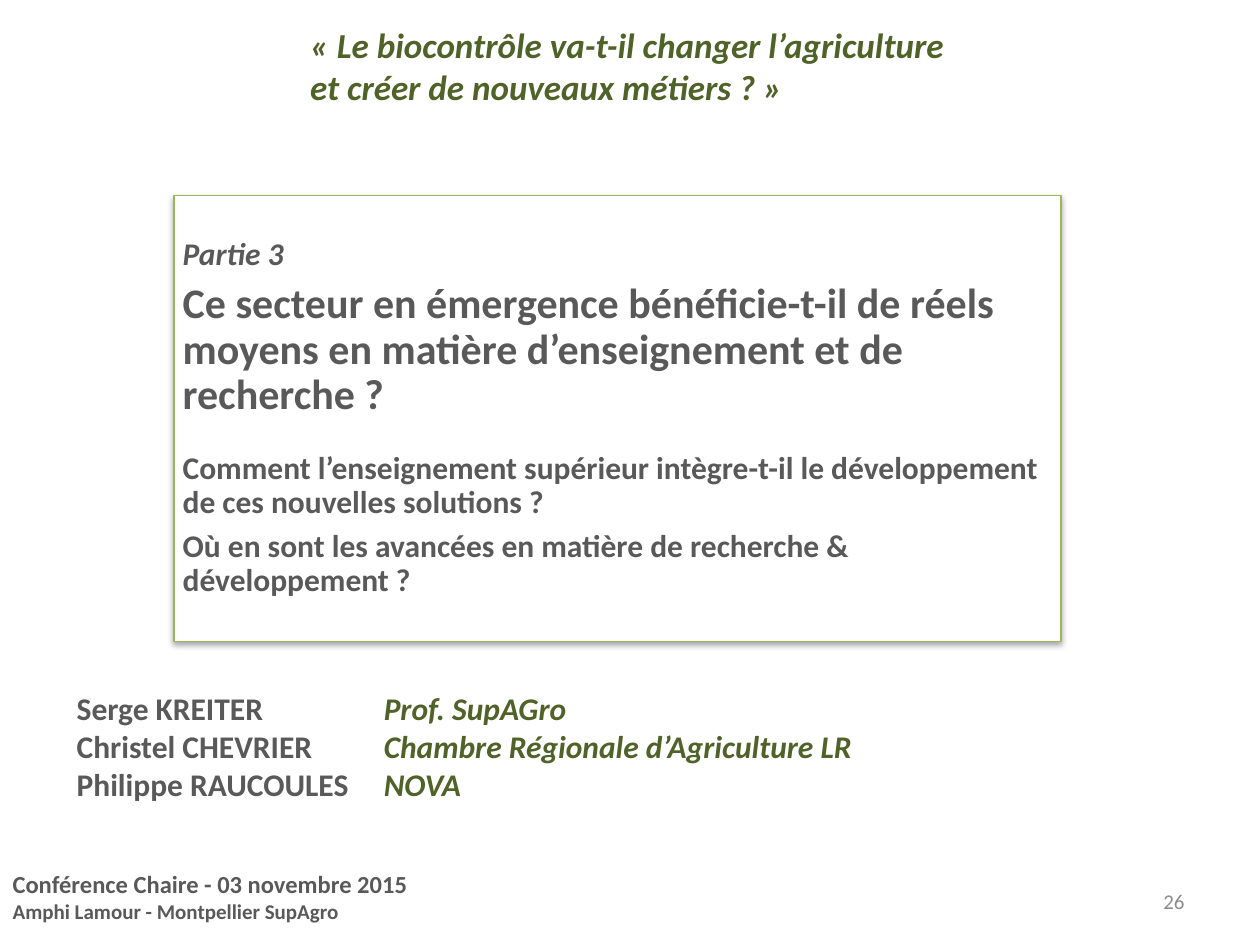
from lxml.etree import SubElement
from pptx import Presentation
from pptx.dml.color import RGBColor
from pptx.enum.shapes import MSO_SHAPE as Shape
from pptx.enum.text import MSO_ANCHOR as Anchor, MSO_AUTO_SIZE as AutoSize, PP_ALIGN as Align
from pptx.oxml import parse_xml
from pptx.oxml.ns import nsdecls, qn
from pptx.util import Pt

GREY, GREEN = "595959", "4F6228"
SHADOW = (
    f'<a:effectLst {nsdecls("a")}><a:outerShdw blurRad="{Pt(3.1)}" dist="{Pt(1.8)}" '
    'dir="5400000" rotWithShape="0"><a:srgbClr val="000000"><a:alpha val="35000"/>'
    '</a:srgbClr></a:outerShdw></a:effectLst>'
)


def rgb(hex_code):
    """Turn a hex string into a colour."""
    return RGBColor.from_string(hex_code)


def place(region, box):
    """Move a shape to a box given in points."""
    region.left, region.top, region.width, region.height = (Pt(length) for length in box)


def prepare(frame, anchor, side=7.2, edge=3.6):
    """Set wrapping, anchor and margins of a text frame."""
    frame.word_wrap = True
    frame.auto_size = AutoSize.NONE
    frame.vertical_anchor = anchor
    frame.margin_left = frame.margin_right = Pt(side)
    frame.margin_top = frame.margin_bottom = Pt(edge)


def add_paragraph(frame, index, align=Align.LEFT):
    """Return the paragraph at an index, adding it after the first one."""
    paragraph = frame.add_paragraph() if index else frame.paragraphs[0]
    paragraph.alignment = align
    paragraph.space_before = paragraph.space_after = Pt(0)
    return paragraph


def add_run(paragraph, words, size, color, bold=True, italic=False):
    """Add one formatted run."""
    run = paragraph.add_run()
    run.text = words
    font = run.font
    font.name, font.size, font.bold, font.italic = "Calibri", Pt(size), bold, italic
    font.color.rgb = rgb(color)


def fill_heading(title, box):
    """Write the conference question in the title."""
    place(title, box)
    prepare(title.text_frame, Anchor.MIDDLE)
    question = add_paragraph(title.text_frame, 0)
    add_run(question, "«\u00a0Le biocontrôle va-t-il changer l’agriculture", 20, GREEN, italic=True)
    question.add_line_break()
    add_run(question, "et créer de nouveaux métiers ?\u00a0»", 20, GREEN, italic=True)


def fill_event(subtitle, box):
    """Write the event and its venue in the subtitle."""
    place(subtitle, box)
    prepare(subtitle.text_frame, Anchor.TOP)
    event = (("Conférence Chaire - 03 novembre 2015", 14),
             ("Amphi Lamour - Montpellier SupAgro", 12))
    for index, (words, size) in enumerate(event):
        add_run(add_paragraph(subtitle.text_frame, index), words, size, GREY)


def add_part(slide, box):
    """Add the framed part title with its questions."""
    panel = slide.shapes.add_shape(Shape.RECTANGLE, *(Pt(length) for length in box))
    panel.fill.solid()
    panel.fill.fore_color.rgb = rgb("FFFFFF")
    panel.line.color.rgb = rgb("98B955")
    panel.line.width = Pt(0.75)
    panel._element.spPr.append(parse_xml(SHADOW))
    prepare(panel.text_frame, Anchor.MIDDLE, 5, 5)
    contents = (
        ("Partie 3", 18, True, 0),
        ("Ce secteur en émergence bénéficie-t-il de réels moyens en matière "
         "d’enseignement et de recherche ?", 24, False, 0),
        ("Comment l’enseignement supérieur intègre-t-il le développement de ces "
         "nouvelles solutions ?", 18, False, 13),
        ("Où en sont les avancées en matière de recherche & développement ?", 18, False, 0),
    )
    for index, (words, size, italic, before) in enumerate(contents):
        paragraph = add_paragraph(panel.text_frame, index)
        paragraph.line_spacing = 0.9
        paragraph.space_before, paragraph.space_after = Pt(before), Pt(6)
        add_run(paragraph, words, size, GREY, italic=italic)


def add_speakers(slide, box):
    """List the speakers with their affiliations at a tab stop."""
    frame = slide.shapes.add_textbox(*(Pt(length) for length in box)).text_frame
    prepare(frame, Anchor.TOP)
    speakers = (("Serge KREITER", "Prof. SupAGro"),
                ("Christel CHEVRIER", "Chambre Régionale d’Agriculture LR"),
                ("Philippe RAUCOULES", "NOVA"))
    for index, (speaker, affiliation) in enumerate(speakers):
        paragraph = add_paragraph(frame, index)
        tabs = SubElement(paragraph._p.get_or_add_pPr(), qn("a:tabLst"))
        SubElement(tabs, qn("a:tab"), pos=str(Pt(175.5)), algn="l")
        add_run(paragraph, speaker + "\t", 18, GREY)
        add_run(paragraph, affiliation, 18, GREEN, italic=True)


def add_page_number(slide, box):
    """Add the page number."""
    frame = slide.shapes.add_textbox(*(Pt(length) for length in box)).text_frame
    prepare(frame, Anchor.MIDDLE)
    add_run(add_paragraph(frame, 0, Align.RIGHT), "26", 12, "8C8C8C", bold=False)


def main():
    """Build and save the slide."""
    deck = Presentation()
    deck.slide_width, deck.slide_height = Pt(720), Pt(540)
    slide = deck.slides.add_slide(deck.slide_layouts[0])
    fill_event(slide.placeholders[1], (0, 493.2, 251.3, 46))
    fill_heading(slide.shapes.title, (170, 10, 553, 55.4))
    add_page_number(slide, (516.2, 500.4, 167.8, 28.8))
    add_part(slide, (99.4, 111.6, 506.9, 254.9))
    add_speakers(slide, (36.7, 390.2, 663, 72.7))
    deck.save("out.pptx")


if __name__ == "__main__":
    main()
